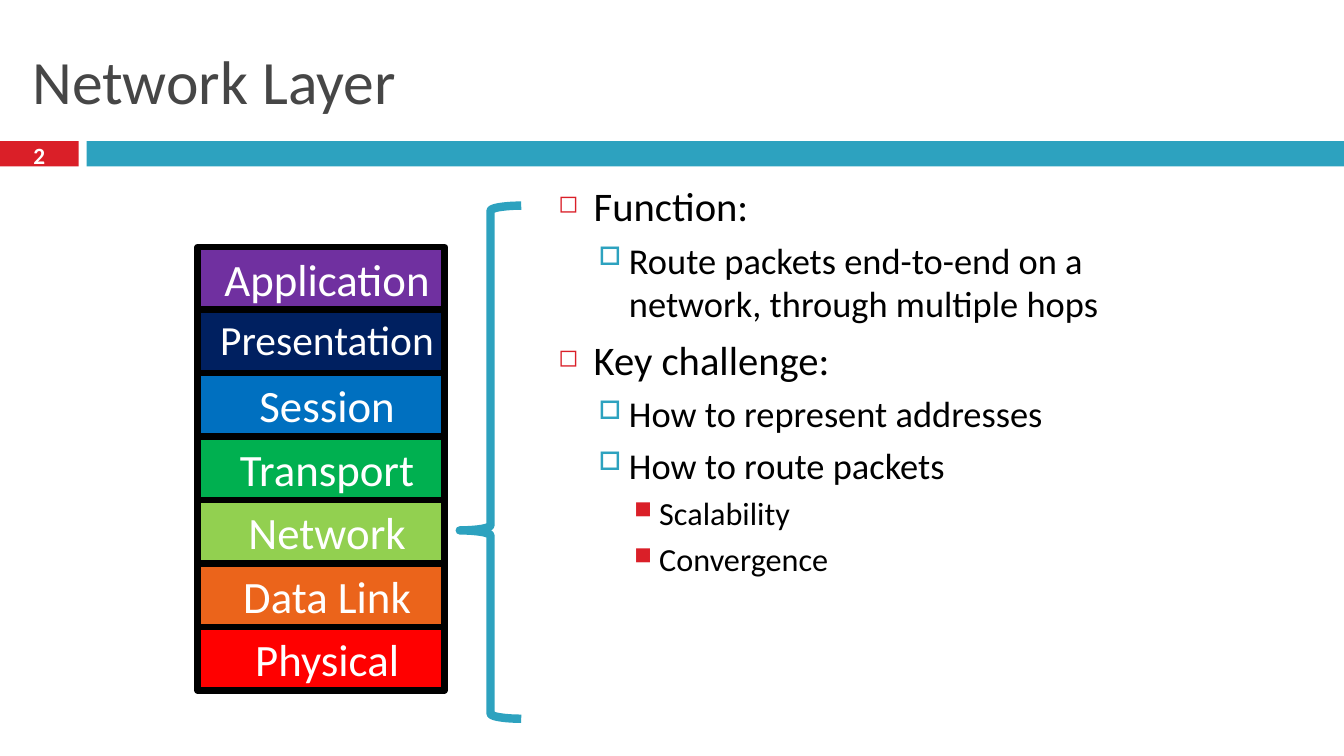
from lxml.etree import SubElement
from pptx import Presentation
from pptx.dml.color import RGBColor
from pptx.enum.shapes import MSO_SHAPE
from pptx.enum.text import MSO_ANCHOR, MSO_AUTO_SIZE, PP_ALIGN
from pptx.oxml.ns import qn
from pptx.util import Pt

# Content
TITLE = "Network Layer"
NUMBER = "2"
LAYERS = [
    ("Application", "7030A0", 32),
    ("Presentation", "002060", 29.6),
    ("Session", "0070C0", 32),
    ("Transport", "00B050", 32),
    ("Network", "92D050", 32),
    ("Data Link", "EB641B", 32),
    ("Physical", "FF0000", 32),
]
POINTS = [
    (0, "Function:"),
    (1, "Route packets end-to-end on a network, through multiple hops"),
    (0, "Key challenge:"),
    (1, "How to represent addresses"),
    (1, "How to route packets"),
    (2, "Scalability"),
    (2, "Convergence"),
]
RED, TEAL = "DA1F28", "2DA2BF"
# Per level: text size, space before, margin px, hanging px, bullet, colour, bullet %
LEVELS = [
    (29, 7, 35, 35, "◻", RED, 60),
    (26, 5.5, 70, 30, "□", TEAL, 70),
    (23, 5, 100, 25, "■", RED, 75),
]
STACK_LEFT, STACK_TOP, STACK_W, STACK_H = 196, 245, 245, 440


def px(n):
    """100 px to the inch."""
    return n * 9144


def color(value):
    return RGBColor.from_string(value)


def write(p, text, size, fill="000000", bold=False, align=PP_ALIGN.LEFT):
    p.alignment = align
    r = p.add_run()
    r.text = text
    r.font.name = "Calibri"
    r.font.size = Pt(size)
    r.font.bold = bold
    r.font.color.rgb = color(fill)


def add_shape(kind, left, top, width, height, fill=None, line=None, weight=1):
    sp = s.shapes.add_shape(kind, px(left), px(top), px(width), px(height))
    sp.shadow.inherit = False
    if fill:
        sp.fill.solid()
        sp.fill.fore_color.rgb = color(fill)
    else:
        sp.fill.background()
    if line:
        sp.line.color.rgb = color(line)
        sp.line.width = Pt(weight)
    else:
        sp.line.fill.background()
    return sp


def add_text_frame(left, top, width, height):
    tf = s.shapes.add_textbox(px(left), px(top), px(width), px(height)).text_frame
    tf.word_wrap = True
    return tf


def set_bullet(p, char, fill, percent):
    pPr = p._p.get_or_add_pPr()
    SubElement(SubElement(pPr, qn("a:buClr")), qn("a:srgbClr"), val=fill)
    SubElement(pPr, qn("a:buSzPct"), val=str(percent * 1000))
    SubElement(pPr, qn("a:buChar"), char=char)


prs = Presentation()
prs.slide_width, prs.slide_height = px(1333), px(750)
s = prs.slides.add_slide(prs.slide_layouts[5])

# Title
title = s.shapes.title
title.left, title.top, title.width, title.height = px(22), px(25), px(1289), px(108)
tf = title.text_frame
tf.auto_size = MSO_AUTO_SIZE.NONE
tf.vertical_anchor = MSO_ANCHOR.MIDDLE
write(tf.paragraphs[0], TITLE, 44, fill="464646")

# Bars under the title, with the slide number
add_shape(MSO_SHAPE.RECTANGLE, 0, 140, 78, 25, fill=RED)
add_shape(MSO_SHAPE.RECTANGLE, 86, 140, 1247, 25, fill=TEAL)
tf = add_text_frame(0, 137, 78, 33)
tf.vertical_anchor = MSO_ANCHOR.MIDDLE
write(tf.paragraphs[0], NUMBER, 16.6, fill="FFFFFF", bold=True, align=PP_ALIGN.CENTER)

# Bulleted points
tf = add_text_frame(544, 175, 606, 558)
for i, (level, text) in enumerate(POINTS):
    size, before, margin, hanging, char, fill, percent = LEVELS[level]
    p = tf.add_paragraph() if i else tf.paragraphs[0]
    p.level = level
    p.space_before = Pt(before)
    write(p, text, size)
    pPr = p._p.get_or_add_pPr()
    pPr.set("marL", str(px(margin)))
    pPr.set("indent", str(px(-hanging)))
    set_bullet(p, char, fill, percent)

# Stack of layers
for i, (name, fill, size) in enumerate(LAYERS):
    top = STACK_TOP + STACK_H * i // len(LAYERS)
    sp = add_shape(MSO_SHAPE.RECTANGLE, STACK_LEFT, top, STACK_W, 63,
                   fill=fill, line="000000", weight=4.5)
    tf = sp.text_frame
    tf.vertical_anchor = MSO_ANCHOR.TOP
    p = tf.paragraphs[0]
    write(p, name, size, fill="FFFFFF", align=PP_ALIGN.CENTER)
    pPr = p._p.get_or_add_pPr()
    pPr.set("marL", str(px(12)))
    pPr.set("indent", "0")
    SubElement(SubElement(pPr, qn("a:spcBef")), qn("a:spcPct"), val="20000")

# Brace pointing at the network layer
brace = add_shape(MSO_SHAPE.LEFT_BRACE, 456, 204, 61, 509, line=TEAL, weight=6)
brace.adjustments[0] = 0.083
brace.adjustments[1] = 0.633

prs.save("out.pptx")
